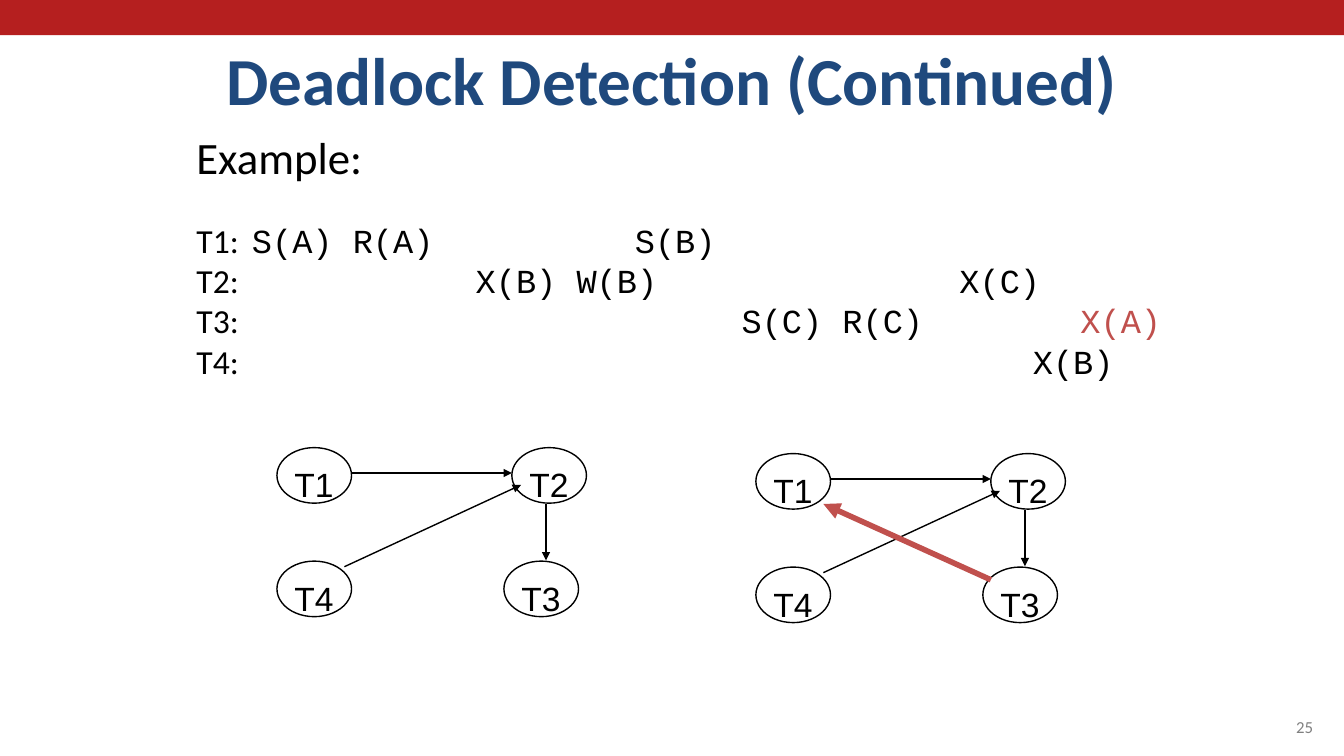
from dataclasses import dataclass
from lxml import etree
from pptx import Presentation
from pptx import util as u
from pptx.dml.color import RGBColor
from pptx.enum import shapes, text
from pptx.oxml import ns


@dataclass(frozen=True)
class Theme:
    bar: str = "B51F1F"
    title: str = "1F497D"
    ink: str = "000000"
    alert: str = "C0504D"
    grey: str = "808080"
    body: str = "Calibri"
    code: str = "Courier New"
    label: str = "Arial"
    huge: int = 48
    large: int = 32
    main: int = 24
    small: int = 12


LOOK = Theme()
ROWS = [
    ("T1:", [(1.4, "S(A) R(A)", LOOK.ink), (11.05, "S(B)", LOOK.ink)]),
    ("T2:", [(7.04, "X(B) W(B)", LOOK.ink), (19.23, "X(C)", LOOK.ink)]),
    ("T3:", [(13.74, "S(C) R(C)", LOOK.ink), (22.28, "X(A)", LOOK.alert)]),
    ("T4:", [(21.08, "X(B)", LOOK.ink)]),
]
NODES = {"T1": (0, 0), "T2": (5.92, 0), "T4": (0, 2.86), "T3": (5.72, 2.86)}
WAITS = [
    (1.9, 0.64, 5.92, 0.64, LOOK.ink, 1),
    (6.78, 1.42, 6.78, 2.84, LOOK.ink, 1),
    (1.7, 3, 6.15, 0.94, LOOK.ink, 1),
]
CYCLE = (5.92, 3.18, 1.7, 1.27, LOOK.alert, 4)


def apply(obj, form):
    for key, val in form.items():
        setattr(obj, key, val)


def add_run(para, words, size, color, face=LOOK.body, bold=False):
    run = para.add_run()
    run.text = words
    apply(run.font, {"size": u.Pt(size), "name": face, "bold": bold})
    run.font.color.rgb = RGBColor.from_string(color)


def add_box(slide, box, **form):
    frame = slide.shapes.add_textbox(*map(u.Cm, box)).text_frame
    base = {"word_wrap": True, "margin_left": u.Cm(0.23), "margin_right": u.Cm(0.23),
            "margin_top": u.Cm(0.11), "margin_bottom": u.Cm(0.11)}
    apply(frame, base | form)
    return frame


def add_bar(slide, box):
    bar = slide.shapes.add_shape(shapes.MSO_SHAPE.RECTANGLE, *map(u.Cm, box))
    bar.shadow.inherit = False
    bar.fill.solid()
    bar.fill.fore_color.rgb = RGBColor.from_string(LOOK.bar)
    bar.line.fill.background()


def add_title(slide, box):
    frame = add_box(slide, box, vertical_anchor=text.MSO_ANCHOR.BOTTOM)
    para = frame.paragraphs[0]
    para.alignment = text.PP_ALIGN.CENTER
    add_run(para, "Deadlock Detection (Continued)", LOOK.huge, LOOK.title, bold=True)


def add_plan(slide, box):
    frame = add_box(slide, box)
    add_run(frame.paragraphs[0], "Example:", LOOK.large, LOOK.ink)
    for num, (name, steps) in enumerate(ROWS):
        para = frame.add_paragraph()
        tabs = etree.SubElement(para._p.get_or_add_pPr(), ns.qn("a:tabLst"))
        for left, _, _ in steps:
            etree.SubElement(tabs, ns.qn("a:tab"), pos=str(u.Cm(left)), algn="l")
        apply(para, {"line_spacing": u.Pt(28.8), "space_before": u.Pt(0 if num else 26)})
        add_run(para, name, LOOK.main, LOOK.ink)
        for _, step, color in steps:
            add_run(para, "\t" + step, LOOK.main, color, LOOK.code)


def add_node(slide, name, left, top):
    oval = slide.shapes.add_shape(
        shapes.MSO_SHAPE.OVAL, *map(u.Cm, (left, top, 1.88, 1.4)))
    oval.shadow.inherit = False
    oval.fill.background()
    oval.line.color.rgb = RGBColor.from_string(LOOK.ink)
    oval.line.width = u.Pt(1)
    frame = add_box(slide, (left + 0.21, top + 0.31, 1.45, 1.24), word_wrap=False)
    add_run(frame.paragraphs[0], name, LOOK.main, LOOK.ink, LOOK.label)


def add_edge(slide, ends, color, width):
    edge = slide.shapes.add_connector(
        shapes.MSO_CONNECTOR.STRAIGHT, *map(u.Cm, ends))
    edge.line.color.rgb = RGBColor.from_string(color)
    edge.line.width = u.Pt(width)
    etree.SubElement(edge.line._get_or_add_ln(), ns.qn("a:tailEnd"), type="triangle")
    etree.SubElement(edge._element.spPr, ns.qn("a:effectLst"))


def add_graph(slide, left, top, edges):
    for name, (dx, dy) in NODES.items():
        add_node(slide, name, left + dx, top + dy)
    for x1, y1, x2, y2, color, width in edges:
        add_edge(slide, (left + x1, top + y1, left + x2, top + y2), color, width)


def add_page(slide, box):
    frame = add_box(slide, box, vertical_anchor=text.MSO_ANCHOR.BOTTOM)
    para = frame.paragraphs[0]
    para.alignment = text.PP_ALIGN.RIGHT
    add_run(para, "25", LOOK.small, LOOK.grey)


def main():
    deck = Presentation()
    apply(deck, {"slide_width": u.Cm(33.87), "slide_height": u.Cm(19.05)})
    slide = deck.slides.add_slide(deck.slide_layouts[6])
    add_bar(slide, (0, 0, 33.87, 0.89))
    add_title(slide, (0, 0.81, 33.87, 2.29))
    add_plan(slide, (4.72, 3.15, 26.52, 5.61))
    add_graph(slide, 6.98, 11.28, WAITS)
    add_graph(slide, 19.05, 11.43, [*WAITS, CYCLE])
    add_page(slide, (24.28, 17.35, 9.04, 1.32))
    deck.save("out.pptx")


if __name__ == "__main__":
    main()
